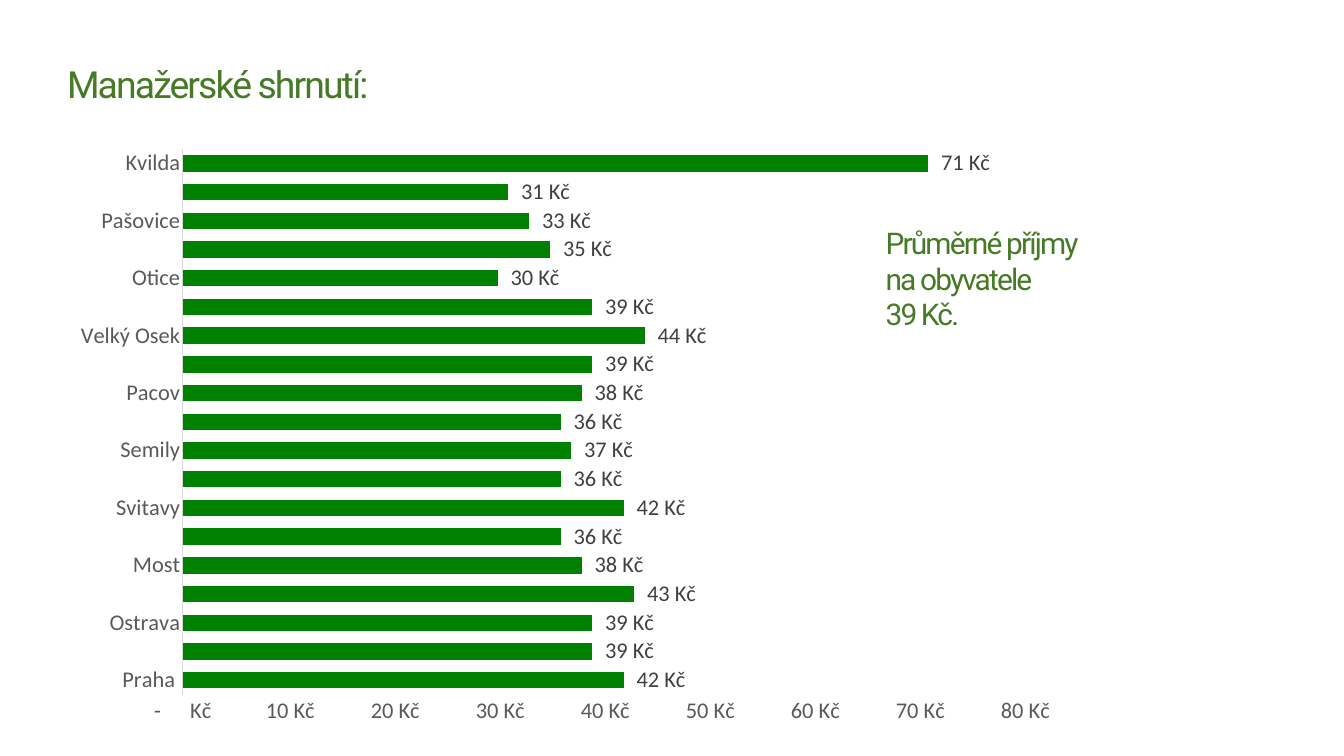
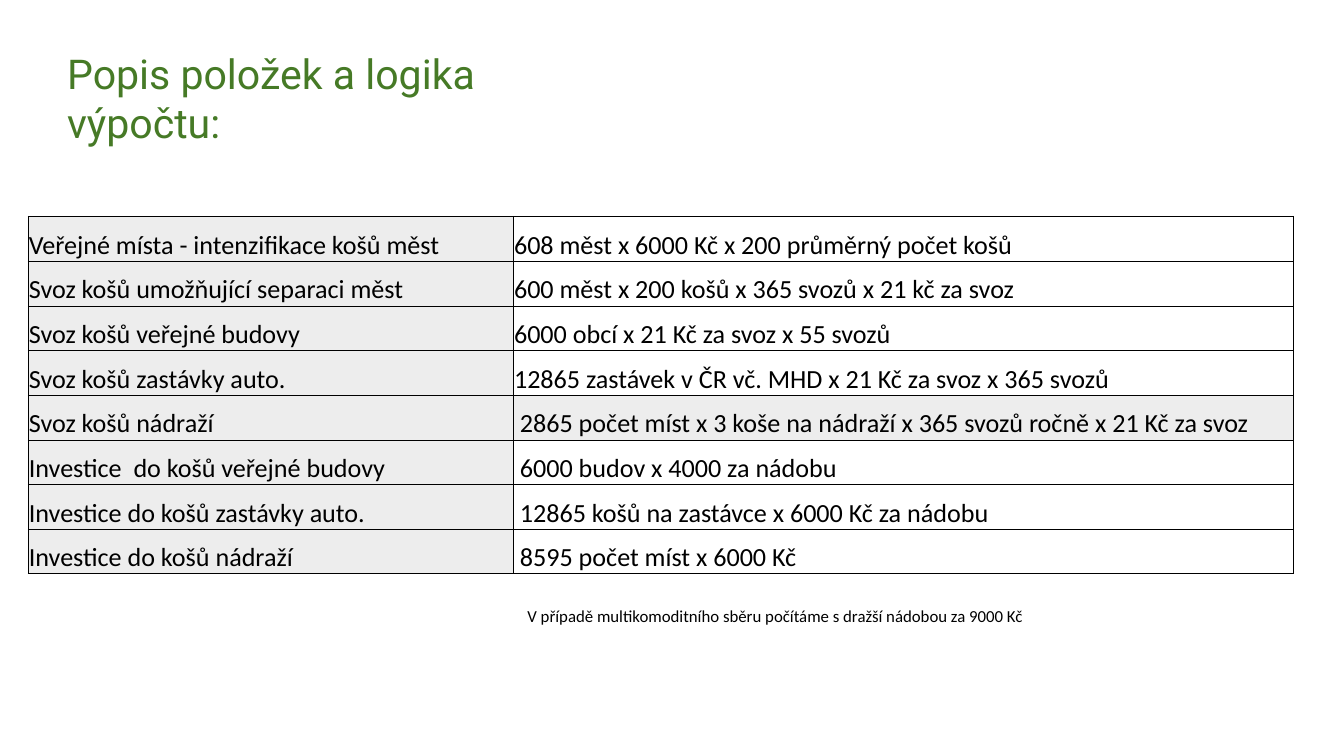
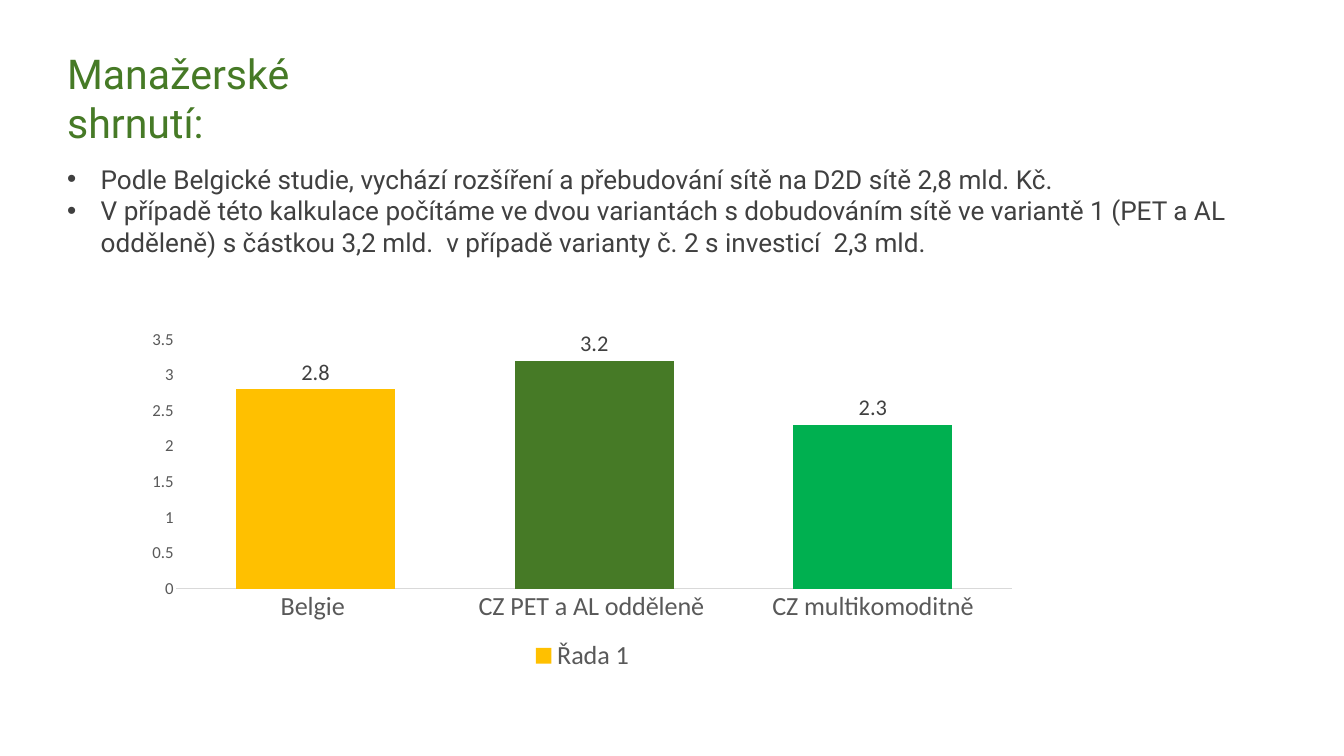
"""Build three slides on waste collection costs: two charts and a table of items."""
import pptx
import pptx.chart.data
import pptx.dml.color
import pptx.enum.chart
import pptx.enum.text
import pptx.oxml
import pptx.oxml.ns
import pptx.oxml.xmlchemy
import pptx.util

Pt = pptx.util.Pt
GREEN, DARK, GREY, PALE, RULE, BLACK = "467A26", "404040", "595959", "EDEDED", "D9D9D9", "000000"
LEFT = 64.8
MONEY = r'_-* #\ ##0\ "Kč"_-;\-* #\ ##0\ "Kč"_-;_-* "-"??\ "Kč"_-;_-@_-'


def paint(fill, tone):
    fill.solid()
    fill.fore_color.rgb = pptx.dml.color.RGBColor.from_string(tone)


def dress(font, size, tone, name="Calibri"):
    for key, val in {"size": Pt(size), "name": name, "bold": False}.items():
        setattr(font, key, val)
    paint(font.fill, tone)


deck = pptx.Presentation()
deck.slide_width, deck.slide_height = Pt(1440), Pt(810)
slides = [deck.slides.add_slide(deck.slide_layouts[6]) for _ in range(3)]
first, second, third = slides

texts = [
    (first, (LEFT, 61.92, 1171.44, 55.44), ["Manažerské shrnutí:"],
     {"size": 40, "tone": GREEN, "name": "Roboto"}, {"spc": "-200"}, {}),
    (first, (941.76, 236.88, 252.72, 123.84), ["Průměrné příjmy na obyvatele", "39 Kč."],
     {"size": 32, "tone": GREEN, "name": "Roboto"}, {"spc": "-200"}, {}),
    (second, (LEFT, 48.24, 619, 60.48), ["Popis položek a logika výpočtu:"],
     {"size": 44, "tone": GREEN, "name": "Roboto"}, {}, {}),
    (second, (558, 645.12, 552.24, 28.8),
     ["V případě multikomoditního sběru počítáme s dražší nádobou za 9000 Kč"],
     {"size": 18, "tone": BLACK}, {}, {}),
    (third, (LEFT, 48.24, 403, 60.48), ["Manažerské shrnutí:"],
     {"size": 44, "tone": GREEN, "name": "Roboto"}, {}, {}),
    (third, (LEFT, 171.36, 1314, 108.72),
     ["Podle Belgické studie, vychází rozšíření a přebudování sítě na D2D sítě 2,8 mld. Kč.",
      "V případě této kalkulace počítáme ve dvou variantách s dobudováním sítě ve variantě 1 "
      "(PET a AL odděleně) s částkou 3,2 mld.  v případě varianty č. 2 s investicí  2,3 mld."],
     {"size": 28, "tone": DARK, "name": "Roboto"}, {},
     {"marL": str(Pt(36)), "indent": str(-Pt(36))}),
]
for slide, box, lines, look, space, hang in texts:
    frame = slide.shapes.add_textbox(*map(Pt, box)).text_frame
    frame.word_wrap = True
    frame.auto_size = pptx.enum.text.MSO_AUTO_SIZE.SHAPE_TO_FIT_TEXT
    frame.text = "\n".join(lines)
    for para in frame.paragraphs:
        run = para.runs[0]
        dress(run.font, **look)
        for key, val in space.items():
            run.font._element.set(key, val)
        if hang:
            props = para._p.get_or_add_pPr()
            for key, val in hang.items():
                props.set(key, val)
            for tag, key, val in (("a:buFont", "typeface", "Arial"), ("a:buChar", "char", "•")):
                mark = pptx.oxml.xmlchemy.OxmlElement(tag)
                mark.set(key, val)
                props.append(mark)

towns = {
    "Praha ": 42, "Brno": 39, "Ostrava": 39, "Olomouc": 43, "Most": 38, "Karviná": 36,
    "Svitavy": 42, "Bučovice": 36, "Semily": 37, "Valašské Klobouky": 36, "Pacov": 38,
    "Velké Pavlovice": 39, "Velký Osek": 44, "Kunčice pod Ondřejníkem": 39, "Otice": 30,
    "Kašava": 35, "Pašovice": 33, "Vysočina": 31, "Kvilda": 71,
}
plans = {"Belgie ": 2.8, "CZ PET a AL odděleně ": 3.2, "CZ multikomoditně": 2.3}
kinds = pptx.enum.chart.XL_CHART_TYPE
charts = [
    (first, kinds.BAR_CLUSTERED, (LEFT, 146.88, 1087.2, 642.24), "Series 1", towns,
     "008000", {}, MONEY, (24, 24), (80, 10), False),
    (third, kinds.COLUMN_CLUSTERED, (144, 344.88, 959.76, 380.16), "Řada 1", plans,
     "FFC000", {1: GREEN, 2: "00B050"}, "General", (28, 18), (3.5, 0.5), True),
]
for slide, kind, box, name, data, tone, points, form, sizes, scale, legend in charts:
    feed = pptx.chart.data.CategoryChartData(number_format=form)
    feed.categories = list(data)
    feed.add_series(name, list(data.values()))
    chart = slide.shapes.add_chart(kind, *map(Pt, box), feed).chart
    dress(chart.font, 18, BLACK)
    chart.has_title = False
    chart.has_legend = legend
    if legend:
        chart.legend.position = pptx.enum.chart.XL_LEGEND_POSITION.BOTTOM
        chart.legend.include_in_layout = False
        dress(chart.legend.font, 28, GREY)

    for axis, size in zip((chart.category_axis, chart.value_axis), sizes):
        axis.has_major_gridlines = False
        axis.major_tick_mark = axis.minor_tick_mark = pptx.enum.chart.XL_TICK_MARK.NONE
        dress(axis.tick_labels.font, size, GREY)
    paint(chart.category_axis.format.line.fill, RULE)
    chart.category_axis.format.line.width = Pt(0.75)
    axis = chart.value_axis
    axis.format.line.fill.background()
    for key, val in zip(("minimum_scale", "maximum_scale", "major_unit"), (0, *scale)):
        setattr(axis, key, val)

    plot = chart.plots[0]
    plot.gap_width = 75
    plot.vary_by_categories = False
    row = plot.series[0]
    row.invert_if_negative = False
    paint(row.format.fill, tone)
    for spot, shade in points.items():
        paint(row.points[spot].format.fill, shade)
    labels = row.data_labels
    labels.show_value = True
    labels.position = pptx.enum.chart.XL_LABEL_POSITION.OUTSIDE_END
    dress(labels.font, 24, DARK)
    for part in (axis.tick_labels, labels):
        part.number_format = form
        part.number_format_is_linked = False

items = [
    ("Veřejné místa - intenzifikace košů měst", "608 měst x 6000 Kč x 200 průměrný počet košů"),
    ("Svoz košů umožňující separaci měst", "600 měst x 200 košů x 365 svozů x 21 kč za svoz"),
    ("Svoz košů veřejné budovy", "6000 obcí x 21 Kč za svoz x 55 svozů"),
    ("Svoz košů zastávky auto.", "12865 zastávek v ČR vč. MHD x 21 Kč za svoz x 365 svozů"),
    ("Svoz košů nádraží", " 2865 počet míst x 3 koše na nádraží x 365 svozů ročně x 21 Kč za svoz"),
    ("Investice  do košů veřejné budovy", " 6000 budov x 4000 za nádobu"),
    ("Investice do košů zastávky auto.", " 12865 košů na zastávce x 6000 Kč za nádobu"),
    ("Investice do košů nádraží", " 8595 počet míst x 6000 Kč"),
]
last = len(items) - 1
grid = second.shapes.add_table(len(items), 2, Pt(30.24), Pt(231.84), Pt(1355.76), Pt(383.04)).table
grid.first_row = grid.horz_banding = False
for col, wide in zip(grid.columns, (519.84, 835.92)):
    col.width = Pt(wide)
inset = {"margin_left": Pt(0.72), "margin_top": Pt(0.72), "margin_right": Pt(0.72),
         "margin_bottom": 0, "vertical_anchor": pptx.enum.text.MSO_ANCHOR.BOTTOM}
for r, pair in enumerate(items):
    grid.rows[r].height = Pt(47.88)
    for c, words in enumerate(pair):
        cell = grid.cell(r, c)
        cell.text = words
        for key, val in inset.items():
            setattr(cell, key, val)
        dress(cell.text_frame.paragraphs[0].runs[0].font, 28, BLACK)
        props = cell._tc.get_or_add_tcPr()
        edges = {"L": c == 0, "R": c == 1, "T": r == 0, "B": r == last}
        for side, outer in edges.items():
            props.append(pptx.oxml.parse_xml(
                f'<a:ln{side} {pptx.oxml.ns.nsdecls("a")} w="{Pt(1 if outer else 0.5)}">'
                f'<a:solidFill><a:srgbClr val="{BLACK}"/></a:solidFill></a:ln{side}>'))
        if c == 0 or r == 4:
            paint(cell.fill, PALE)
        else:
            cell.fill.background()

deck.save("out.pptx")
